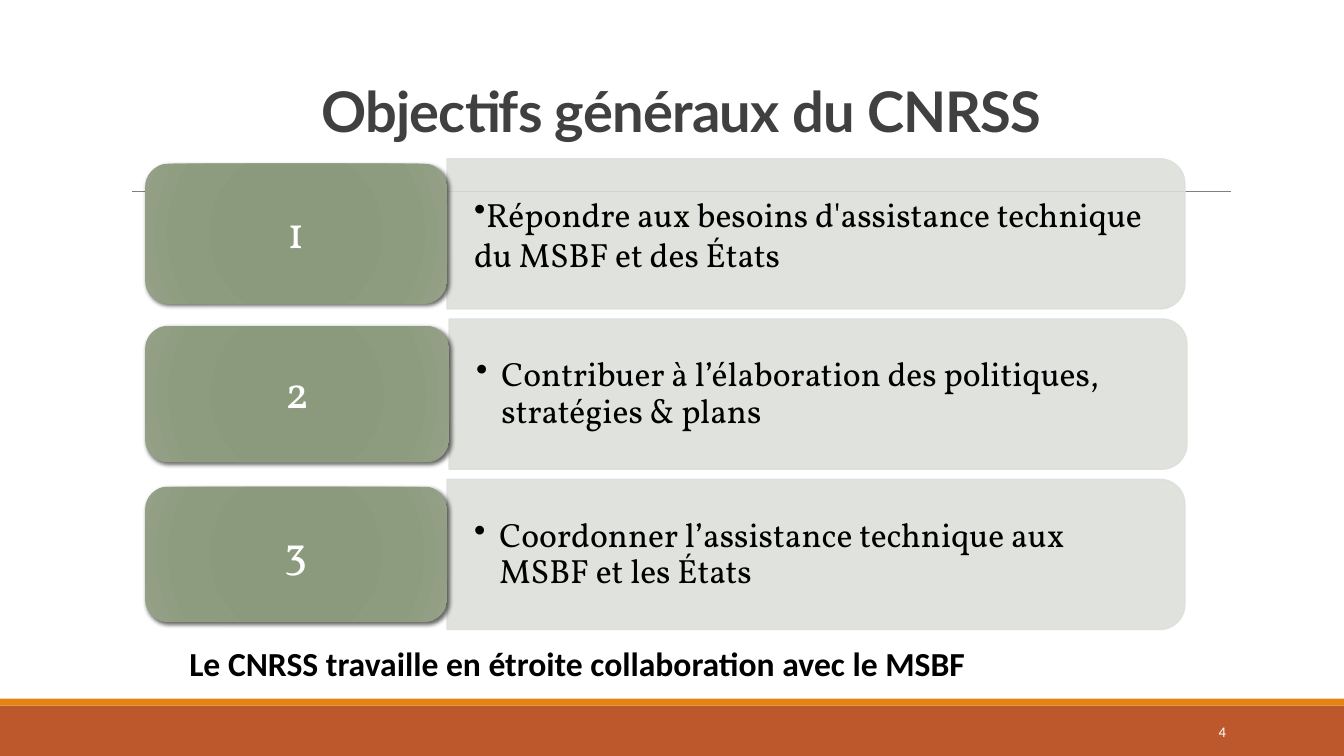
from dataclasses import dataclass

import lxml.etree
import pptx
import pptx.util
import pptx.dml.color
import pptx.enum.shapes
import pptx.enum.text
import pptx.oxml
import pptx.oxml.ns

RGB = pptx.dml.color.RGBColor
SHAPE = pptx.enum.shapes.MSO_SHAPE
ALIGN = pptx.enum.text.PP_ALIGN
ANCHOR = pptx.enum.text.MSO_ANCHOR
qn = pptx.oxml.ns.qn

RUST = RGB(0xBD, 0x58, 0x2C)
ORANGE = RGB(0xE4, 0x83, 0x12)
GRAY = RGB(0x80, 0x80, 0x80)
TITLE_GRAY = RGB(0x40, 0x40, 0x40)
PANEL = RGB(0xDC, 0xDF, 0xDA)
WHITE = RGB(0xFF, 0xFF, 0xFF)
BLACK = RGB(0, 0, 0)
SAGE_STOPS = [
    (0, RGB(0x8A, 0x98, 0x7B)),
    (34, RGB(0x8B, 0x99, 0x7D)),
    (70, RGB(0x8D, 0x9C, 0x7E)),
    (100, RGB(0x94, 0xA1, 0x87)),
]

WIDTH, HEIGHT = pptx.util.Inches(13.33), pptx.util.Inches(7.5)

# Objective rows, in percent of the slide's width or height
FIRST_MIDDLE, ROW_PITCH = 30.93, 21.2
CARD_LEFT, PANEL_LEFT = 10.8, 33.26
PANEL_WIDTH, PANEL_HEIGHT = 54.9, 19.87
TEXT_WIDTH, TEXT_HEIGHT = 54.38, 18


@dataclass(frozen=True)
class Box:
    """Place and size in percent of the slide."""
    left: float
    top: float
    width: float
    height: float

    def emu(self) -> tuple[int, int, int, int]:
        return across(self.left), down(self.top), across(self.width), down(self.height)


@dataclass(frozen=True)
class Style:
    font: str
    size: float
    color: RGB
    bold: bool = False
    align: ALIGN = ALIGN.LEFT
    anchor: ANCHOR = ANCHOR.TOP
    spacing: float = 1.0
    insets: tuple[float, float] = (0.1, 0.05)


@dataclass(frozen=True)
class Objective:
    text: str
    card_height: float
    shift: float = 0
    indent: float = 0.25
    spacing: float = 0.9


OBJECTIVES = [
    Objective("Répondre aux besoins d'assistance technique du MSBF et des États",
              18.53, indent=0, spacing=1.0),
    Objective("Contribuer à l’élaboration des politiques, stratégies & plans", 18, shift=0.15),
    Objective("Coordonner l’assistance technique aux MSBF et les États", 17.87),
]


def across(percent: float) -> int:
    return round(WIDTH * percent / 100)


def down(percent: float) -> int:
    return round(HEIGHT * percent / 100)


def write(s, text: str, style: Style):
    """Fill a shape with one styled run and return its paragraph and run."""
    tf = s.text_frame
    tf.word_wrap = True
    tf.vertical_anchor = style.anchor
    tf.margin_left = tf.margin_right = pptx.util.Inches(style.insets[0])
    tf.margin_top = tf.margin_bottom = pptx.util.Inches(style.insets[1])
    p = tf.paragraphs[0]
    p.alignment = style.align
    p.line_spacing = style.spacing
    r = p.add_run()
    r.text = text
    r.font.name = style.font
    r.font.size = pptx.util.Pt(style.size)
    r.font.bold = style.bold
    r.font.color.rgb = style.color
    return p, r


def add_text(sp, box: Box, text: str, style: Style):
    return write(sp.add_textbox(*box.emu()), text, style)


def add_bar(sp, box: Box, color: RGB) -> None:
    s = sp.add_shape(SHAPE.RECTANGLE, *box.emu())
    s.shadow.inherit = False
    s.fill.solid()
    s.fill.fore_color.rgb = color
    s.line.fill.background()


def add_panel(sp, left: float, middle: float) -> None:
    """Panel with rounded right corners: a top-rounded shape turned a quarter."""
    length, thick = across(PANEL_WIDTH), down(PANEL_HEIGHT)
    s = sp.add_shape(SHAPE.ROUND_2_SAME_RECTANGLE,
                     across(left) + (length - thick) // 2,
                     down(middle) - length // 2, thick, length)
    s.rotation = 90
    s.shadow.inherit = False
    s.line.width = pptx.util.Pt(1)
    for fill in (s.fill, s.line.fill):
        fill.solid()
        fill.fore_color.rgb = PANEL
    for color in s._element.spPr.iter(qn("a:srgbClr")):
        lxml.etree.SubElement(color, qn("a:alpha"), val="90000")


def add_card(sp, box: Box, number: str) -> None:
    s = sp.add_shape(SHAPE.ROUNDED_RECTANGLE, *box.emu())
    s.line.fill.background()
    s.shadow.inherit = False
    s.fill.background()
    spPr = s._element.spPr
    ns = pptx.oxml.ns.nsdecls("a")
    stops = "".join(f'<a:gs pos="{pos * 1000}"><a:srgbClr val="{color}"/></a:gs>'
                    for pos, color in SAGE_STOPS)
    spPr.replace(spPr.find(qn("a:noFill")), pptx.oxml.parse_xml(
        f'<a:gradFill {ns} rotWithShape="1"><a:gsLst>{stops}</a:gsLst><a:path path="circle">'
        '<a:fillToRect l="100000" t="100000" r="100000" b="100000"/></a:path></a:gradFill>'))
    spPr.find(qn("a:effectLst")).append(pptx.oxml.parse_xml(
        f'<a:outerShdw {ns} blurRad="{pptx.util.Pt(3)}" dist="{pptx.util.Pt(2)}" '
        'dir="2700000" rotWithShape="0"><a:srgbClr val="000000"><a:alpha val="60000"/>'
        '</a:srgbClr></a:outerShdw>'))
    write(s, number, Style("Vollkorn", 32, WHITE, align=ALIGN.CENTER,
                           anchor=ANCHOR.MIDDLE, spacing=0.9, insets=(0.2, 0.14)))


def add_objective(sp, index: int, item: Objective) -> None:
    middle = FIRST_MIDDLE + index * ROW_PITCH
    left = PANEL_LEFT + item.shift
    add_panel(sp, left, middle)
    p, r = add_text(sp, Box(left, middle - TEXT_HEIGHT / 2, TEXT_WIDTH, TEXT_HEIGHT), item.text,
                    Style("Vollkorn", 24, BLACK, anchor=ANCHOR.MIDDLE,
                          spacing=item.spacing, insets=(0.27, 0.14)))
    pPr = p._p.get_or_add_pPr()
    indent = pptx.util.Inches(item.indent)
    pPr.set("marL", str(indent))
    pPr.set("indent", str(-indent))
    lxml.etree.SubElement(pPr, qn("a:buChar"), char="•")
    add_card(sp, Box(CARD_LEFT, middle - item.card_height / 2,
                     left - CARD_LEFT, item.card_height), str(index + 1))


def main() -> None:
    prs = pptx.Presentation()
    prs.slide_width, prs.slide_height = WIDTH, HEIGHT
    sp = prs.slides.add_slide(prs.slide_layouts[6]).shapes

    # Footer bars and title rule
    add_bar(sp, Box(0, 93.33, 100, 6.67), RUST)
    add_bar(sp, Box(0, 92.4, 100, 0.93), ORANGE)
    rule = sp.add_connector(pptx.enum.shapes.MSO_CONNECTOR.STRAIGHT,
                            across(9.83), down(25.33), across(91.6), down(25.33))
    rule.line.color.rgb = GRAY
    rule.line.width = pptx.util.Pt(0.5)
    lxml.etree.SubElement(rule._element.spPr, qn("a:effectLst"))

    # Title, slide number and closing line
    p, r = add_text(sp, Box(9.45, 2.4, 82.5, 17.33), "Objectifs généraux du CNRSS",
                    Style("Lato", 40, TITLE_GRAY, bold=True, align=ALIGN.CENTER,
                          anchor=ANCHOR.BOTTOM, spacing=0.85))
    r.font._element.set("spc", "-50")
    add_text(sp, Box(81.23, 94.13, 10.73, 5.33), "4",
             Style("Calibri", 10.5, WHITE, align=ALIGN.RIGHT, anchor=ANCHOR.MIDDLE))
    add_text(sp, Box(13.35, 84.4, 84.15, 6.67),
             "Le CNRSS travaille en étroite collaboration avec le MSBF",
             Style("Calibri", 24, BLACK, bold=True))

    # Numbered objectives
    for index, item in enumerate(OBJECTIVES):
        add_objective(sp, index, item)

    prs.save("out.pptx")


if __name__ == "__main__":
    main()
